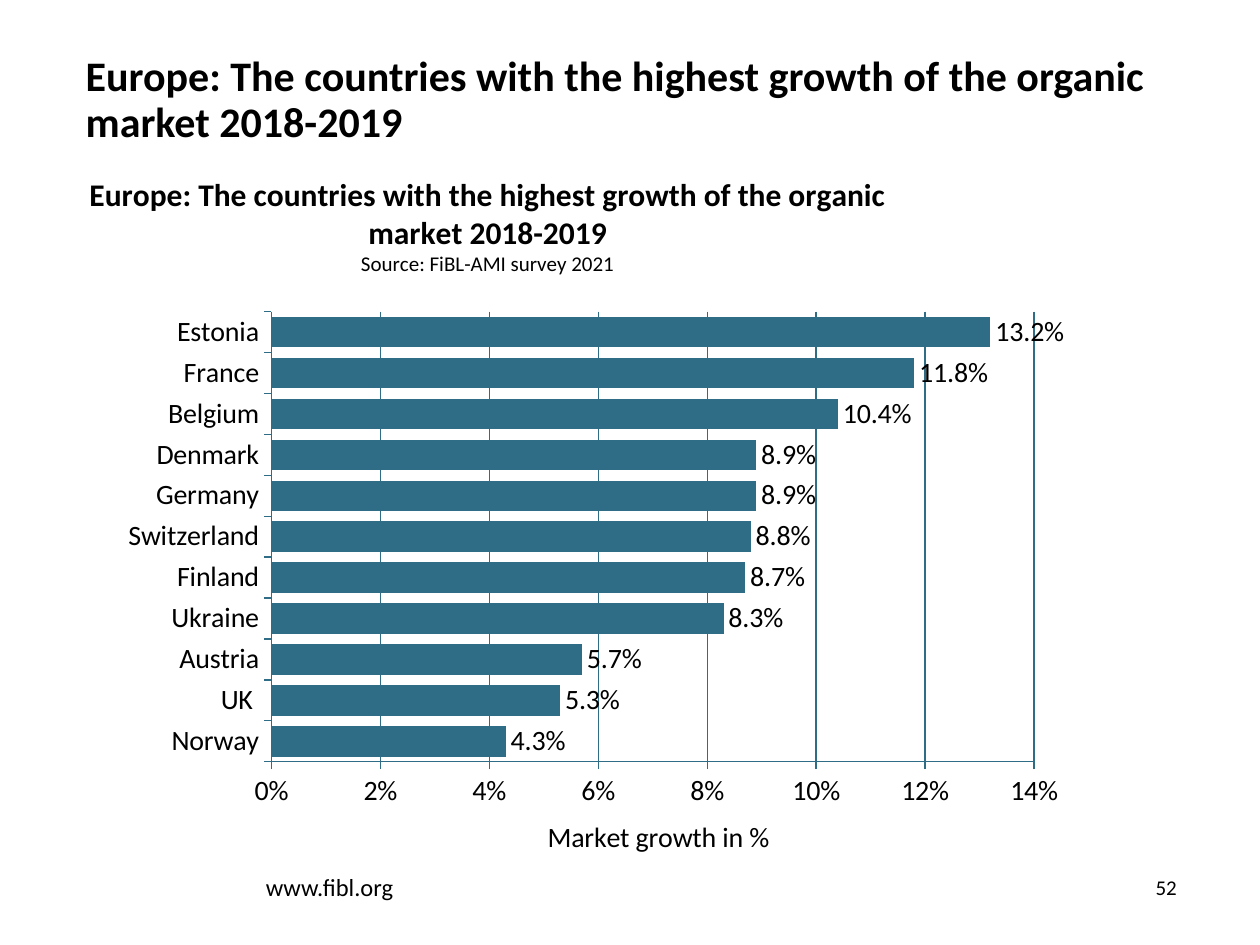
from pptx import Presentation
from pptx.chart.data import CategoryChartData
from pptx.dml.color import RGBColor
from pptx.enum.chart import XL_CHART_TYPE as ChartType, XL_LABEL_POSITION as LabelPos
from pptx.enum.chart import XL_TICK_MARK as Tick
from pptx.enum.text import MSO_ANCHOR as Anchor, PP_ALIGN as Align
from pptx.oxml import parse_xml
from pptx.oxml.ns import nsdecls, qn
from pptx.util import Inches, Pt

BLACK = RGBColor(0x00, 0x00, 0x00)
TEAL = RGBColor(0x2F, 0x6C, 0x86)
FONT = "Calibri"
HEADING = "Europe: The countries with the highest growth of the organic market 2018-2019"
GROWTH = {
    "Norway": 0.043, "UK ": 0.053, "Austria": 0.057, "Ukraine": 0.083,
    "Finland": 0.087, "Switzerland": 0.088, "Germany": 0.089, "Denmark": 0.089,
    "Belgium": 0.104, "France": 0.118, "Estonia": 0.132,
}


def style_font(font, size, bold=False):
    font.name, font.size, font.bold = FONT, Pt(size), bold
    font.color.rgb = BLACK


def add_text(page, text, box, size, bold=False, align=Align.LEFT,
             anchor=Anchor.TOP, margin=0.05, spacing=1.0):
    shape = page.shapes.add_textbox(*map(Inches, box))
    frame = shape.text_frame
    frame.word_wrap = True
    frame.vertical_anchor = anchor
    frame.margin_left = frame.margin_right = 0
    frame.margin_top = frame.margin_bottom = Inches(margin)
    para = frame.paragraphs[0]
    para.alignment, para.line_spacing = align, spacing
    span = para.add_run()
    span.text = text
    style_font(span.font, size, bold)


def manual_layout(x, y, w=None, h=None):
    """Layout in shares of the chart; with a size it fixes the inner plot."""
    target = '<c:layoutTarget val="inner"/>' if w else ""
    size = f'<c:w val="{w}"/><c:h val="{h}"/>' if w else ""
    return parse_xml(
        f'<c:layout {nsdecls("c")}><c:manualLayout>{target}'
        '<c:xMode val="edge"/><c:yMode val="edge"/>'
        f'<c:x val="{x}"/><c:y val="{y}"/>{size}</c:manualLayout></c:layout>')


def fill_title(title, lines, x, y):
    """Write (text, size, bold) lines and place the title in the chart."""
    frame = title.text_frame
    for index, (text, size, bold) in enumerate(lines):
        para = frame.add_paragraph() if index else frame.paragraphs[0]
        span = para.add_run()
        span.text = text
        style_font(span.font, size, bold)
    element = title._element
    for old in element.findall(qn("c:layout")):
        element.remove(old)
    element.find(qn("c:tx")).addnext(manual_layout(x, y))


def style_axis(axis):
    axis.major_tick_mark, axis.minor_tick_mark = Tick.OUTSIDE, Tick.NONE
    style_font(axis.tick_labels.font, 16)
    style_line(axis.format.line)


def style_line(line):
    line.color.rgb = TEAL
    line.width = Pt(0.75)


def add_growth_chart(page, box):
    data = CategoryChartData(number_format="0.0%")
    data.categories = list(GROWTH)
    data.add_series("Series 1", list(GROWTH.values()))
    chart = page.shapes.add_chart(
        ChartType.BAR_CLUSTERED, *map(Inches, box), data).chart
    chart.has_legend = False
    style_font(chart.font, 16)

    # Heading and source line
    chart.has_title = True
    fill_title(chart.chart_title, [(HEADING, 18, True),
                                   ("Source: FiBL-AMI survey 2021", 12, False)], 0, 0.01)

    # Axes and gridlines
    style_axis(chart.category_axis)
    values = chart.value_axis
    style_axis(values)
    values.minimum_scale, values.maximum_scale, values.major_unit = 0, 0.14, 0.02
    values.tick_labels.number_format = "0%"
    values.tick_labels.number_format_is_linked = False
    values.has_major_gridlines = True
    style_line(values.major_gridlines.format.line)
    values.has_title = True
    fill_title(values.axis_title, [("Market growth in %", 16, False)], 0.45, 0.92)

    # Bars and value labels
    plot = chart.plots[0]
    plot.gap_width, plot.vary_by_categories = 34, False
    fill = plot.series[0].format.fill
    fill.solid()
    fill.fore_color.rgb = TEAL
    plot.has_data_labels = True
    labels = plot.data_labels
    labels.show_value, labels.position = True, LabelPos.OUTSIDE_END
    labels.number_format, labels.number_format_is_linked = "0.0%", False
    style_font(labels.font, 16)

    # Plot area
    area = chart._chartSpace.chart.plotArea
    for old in area.findall(qn("c:layout")):
        area.remove(old)
    area.insert(0, manual_layout(0.183, 0.211, 0.751, 0.637))


def add_footer(page):
    add_text(page, "www.fibl.org", (2.11, 6.86, 2.99, 0.34), 14, anchor=Anchor.BOTTOM)
    add_text(page, "52", (8.47, 6.8, 0.87, 0.39), 12, align=Align.RIGHT,
             anchor=Anchor.BOTTOM)


def main():
    deck = Presentation()
    deck.slide_width, deck.slide_height = Inches(10), Inches(7.5)
    page = deck.slides.add_slide(deck.slide_layouts[6])
    add_text(page, HEADING, (0.68, 0.44, 8.65, 0.69), 24, bold=True,
             margin=0, spacing=0.9)
    add_growth_chart(page, (0.68, 1.29, 8.06, 5.61))
    add_footer(page)
    deck.save("out.pptx")


if __name__ == "__main__":
    main()
